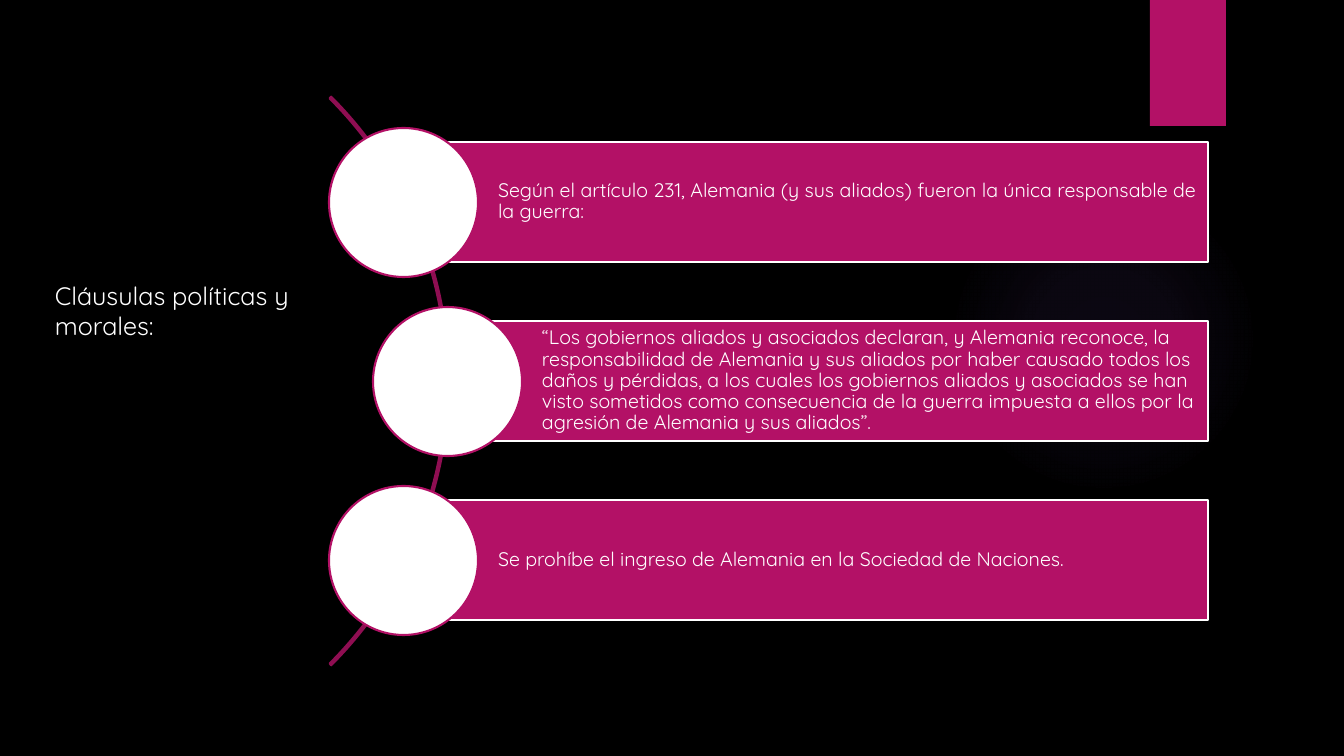
"""Build the slide on the political and moral clauses of the treaty."""
from dataclasses import dataclass

from lxml import etree
from pptx import Presentation
from pptx import util as u
from pptx.dml.color import RGBColor
from pptx.enum import shapes, text
from pptx.oxml import ns

PX = 914400 / 100.8
KIND = shapes.MSO_SHAPE


@dataclass(frozen=True)
class Theme:
    """Colours, font and type sizes."""
    background: str = "000000"
    accent: str = "B31166"
    arc: str = "8F0E52"
    light: str = "FFFFFF"
    glow: str = "9B6BF2"
    font: str = "Quicksand"
    title_size: int = 18
    body_size: int = 14
    line_width: float = 1.5


class SlideBuilder:
    """Draw styled elements on one slide, measured in px."""

    def __init__(self, presentation, theme):
        """Add a blank slide with the theme background."""
        self.theme = theme
        self.slide = presentation.slides.add_slide(presentation.slide_layouts[6])
        fill = self.slide.background.fill
        fill.solid()
        fill.fore_color.rgb = RGBColor.from_string(theme.background)

    def shape(self, kind, box, fill, line=None):
        """Add a preset shape with a plain fill and an optional outline."""
        shape = self.slide.shapes.add_shape(kind, *map(px, box))
        shape.shadow.inherit = False
        shape.fill.solid()
        shape.fill.fore_color.rgb = RGBColor.from_string(fill)
        if line:
            shape.line.color.rgb = RGBColor.from_string(line)
            shape.line.width = u.Pt(self.theme.line_width)
        else:
            shape.line.fill.background()
        return shape

    def glow(self, box, stops):
        """Add a circle that fades outwards through (position, opacity) percentages."""
        shape = self.shape(KIND.OVAL, box, self.theme.glow)
        properties = shape._element.spPr
        gradient = etree.Element(ns.qn("a:gradFill"), rotWithShape="1")
        stop_list = etree.SubElement(gradient, ns.qn("a:gsLst"))
        for position, opacity in stops:
            stop = etree.SubElement(stop_list, ns.qn("a:gs"), pos=str(position * 1000))
            color = etree.SubElement(stop, ns.qn("a:srgbClr"), val=self.theme.glow)
            etree.SubElement(color, ns.qn("a:alpha"), val=str(opacity * 1000))
        radial = etree.SubElement(gradient, ns.qn("a:path"), path="circle")
        etree.SubElement(radial, ns.qn("a:fillToRect"), l="50000", t="50000", r="50000", b="50000")
        properties.replace(properties.find(ns.qn("a:solidFill")), gradient)

    def arc(self, box):
        """Add the thin arc that links the circles."""
        arc = self.shape(KIND.BLOCK_ARC, box, self.theme.arc, self.theme.arc)
        for index, value in enumerate((189, 27, 0.003)):
            arc.adjustments[index] = value

    def set_wording(self, shape, wording, size, insets, spacing=1.0):
        """Put left-aligned wording in a shape."""
        frame = shape.text_frame
        frame.word_wrap = True
        frame.margin_left, frame.margin_top, frame.margin_right, frame.margin_bottom = map(px, insets)
        frame.text = wording
        paragraph = frame.paragraphs[0]
        paragraph.alignment = text.PP_ALIGN.LEFT
        paragraph.line_spacing = spacing
        for run in paragraph.runs:
            run.font.name = self.theme.font
            run.font.size = u.Pt(size)
            run.font.color.rgb = RGBColor.from_string(self.theme.light)
        return frame

    def title(self, box, wording):
        """Add the title text box."""
        frame = self.set_wording(self.slide.shapes.add_textbox(*map(px, box)), wording,
                                 self.theme.title_size, (10, 5, 10, 5))
        frame.auto_size = text.MSO_AUTO_SIZE.SHAPE_TO_FIT_TEXT

    def clause(self, center_x, center_y, wording):
        """Add a clause bar with the circle centred on its left end."""
        right, height, diameter = 1208, 120, 149
        theme = self.theme
        bar = self.shape(KIND.RECTANGLE, (center_x, center_y - height // 2, right - center_x, height),
                         theme.accent, theme.light)
        frame = self.set_wording(bar, wording, theme.body_size, (95, 4, 4, 4), 0.9)
        frame.vertical_anchor = text.MSO_ANCHOR.MIDDLE
        radius = diameter // 2
        self.shape(KIND.OVAL, (center_x - radius, center_y - radius, diameter, diameter),
                   theme.light, theme.accent)


def px(length):
    """Turn px into EMU."""
    return u.Emu(round(length * PX))


def main():
    """Build and save the presentation."""
    presentation = Presentation()
    presentation.slide_width, presentation.slide_height = px(1344), px(756)
    theme = Theme()
    builder = SlideBuilder(presentation, theme)
    builder.glow((949, 184, 310, 310), ((0, 7), (36, 6), (69, 0), (100, 0)))
    builder.shape(KIND.RECTANGLE, (1150, 0, 76, 126), theme.accent)
    builder.arc((-355, -21, 804, 804))
    clauses = (
        (403, "Según el artículo 231, Alemania (y sus aliados) fueron la única responsable de la guerra:"),
        (447, "“Los gobiernos aliados y asociados declaran, y Alemania reconoce, la responsabilidad de "
              "Alemania y sus aliados por haber causado todos los daños y pérdidas, a los cuales los "
              "gobiernos aliados y asociados se han visto sometidos como consecuencia de la guerra "
              "impuesta a ellos por la agresión de Alemania y sus aliados”."),
        (403, "Se prohíbe el ingreso de Alemania en la Sociedad de Naciones."),
    )
    for row, (center_x, wording) in enumerate(clauses):
        builder.clause(center_x, 202 + 179 * row, wording)
    builder.title((45, 275, 260, 72), "Cláusulas políticas y morales:")
    presentation.save("out.pptx")


if __name__ == "__main__":
    main()
